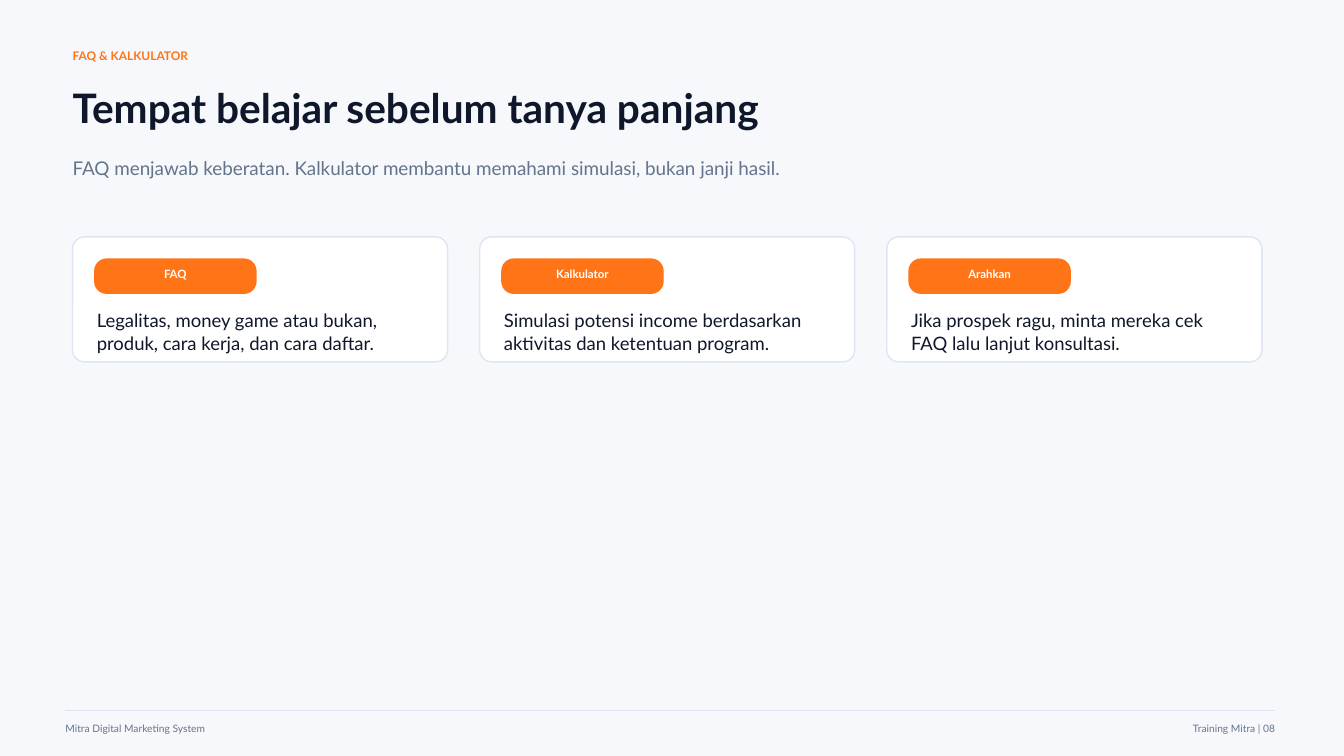
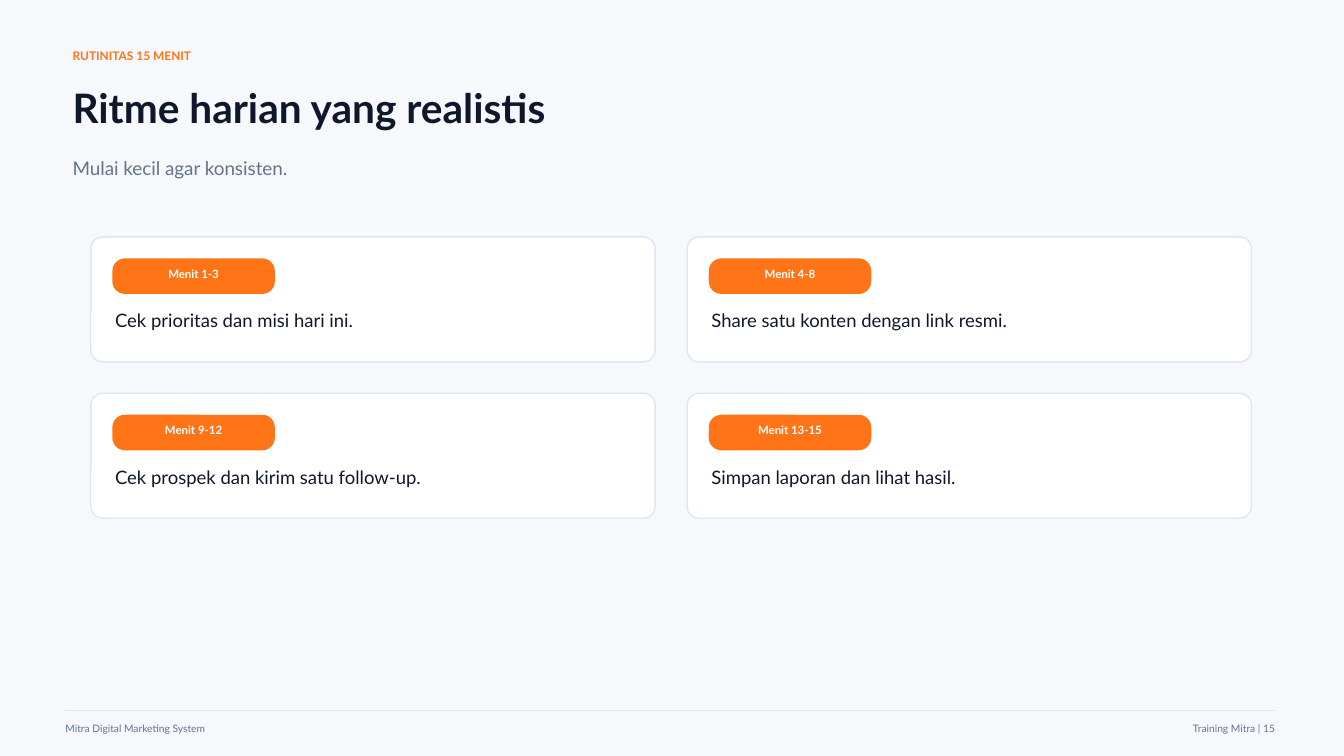
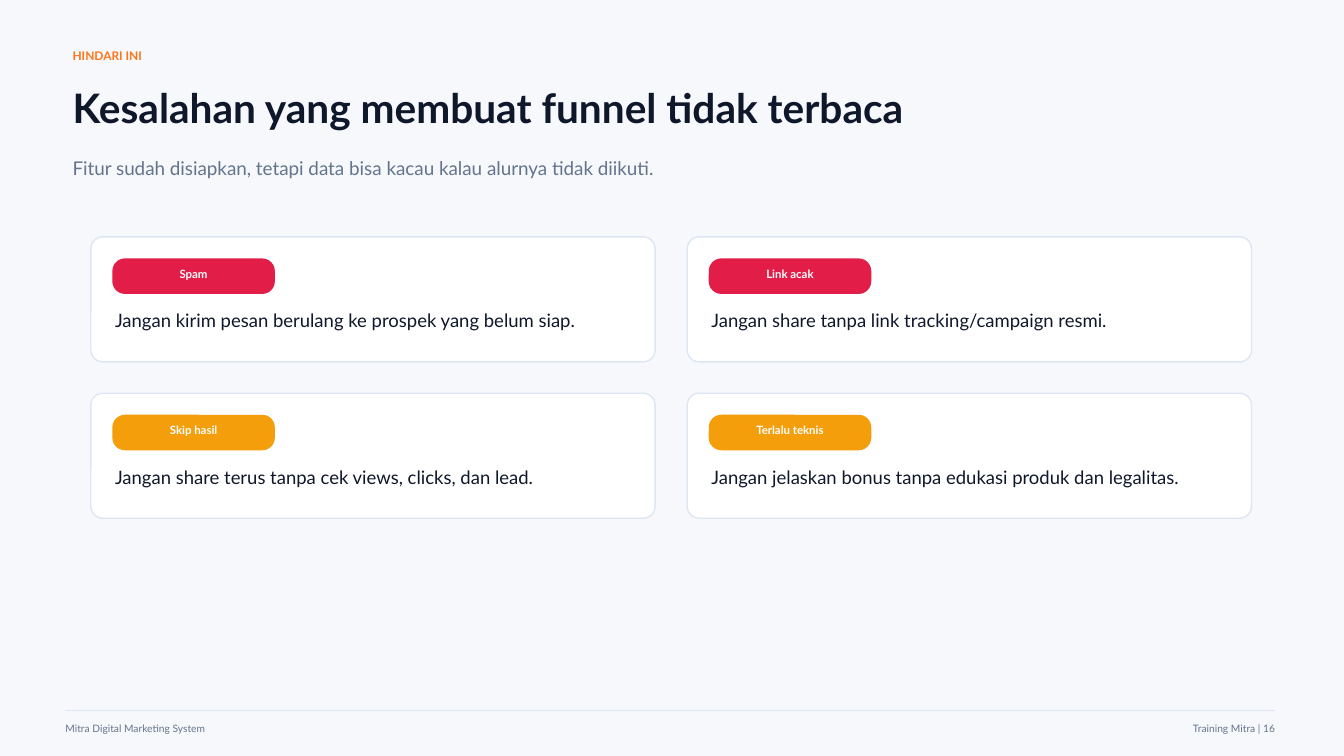
from dataclasses import dataclass

from lxml.etree import SubElement
from pptx import Presentation
from pptx.dml.color import RGBColor
from pptx.enum.shapes import MSO_CONNECTOR, MSO_SHAPE
from pptx.enum.text import MSO_ANCHOR, PP_ALIGN
from pptx.oxml.ns import qn
from pptx.shapes.autoshape import Shape
from pptx.slide import Slide
from pptx.text.text import TextFrame
from pptx.util import Cm, Pt

FONT = "Lato"
PAPER = RGBColor(0xF6, 0xF8, 0xFC)
WHITE = RGBColor(0xFF, 0xFF, 0xFF)
INK = RGBColor(0x0F, 0x17, 0x2A)
GREY = RGBColor(0x64, 0x74, 0x8B)
RULE = RGBColor(0xDD, 0xE6, 0xF2)
ORANGE = RGBColor(0xFF, 0x74, 0x17)
RED = RGBColor(0xE1, 0x1D, 0x48)
AMBER = RGBColor(0xF5, 0x9E, 0x0B)

# Lengths in centimetres
LEFT = 1.83
EDGE, END = 1.65, 32.13
TOP = 5.97
CARD_H = 3.15
GAP_X, GAP_Y = 0.81, 0.79
PAD = 0.56
PILL_W, PILL_H = 4.06, 0.86
BODY_X, BODY_Y, BODY_H = 0.61, 1.83, 0.74
RADIUS = 0.3


@dataclass(frozen=True)
class Box:
    x: float
    y: float
    w: float
    h: float


@dataclass(frozen=True)
class Card:
    label: str
    body: str
    color: RGBColor = ORANGE


@dataclass(frozen=True)
class Grid:
    left: float
    width: float
    cols: int

    def cell(self, index: int) -> Box:
        row, col = divmod(index, self.cols)
        return Box(self.left + col * (self.width + GAP_X),
                   TOP + row * (CARD_H + GAP_Y), self.width, CARD_H)


@dataclass(frozen=True)
class Page:
    number: int
    topic: str
    title: str
    lead: str
    grid: Grid
    cards: tuple[Card, ...]


THREE = Grid(LEFT, 9.45, 3)
TWO = Grid(2.29, 14.22, 2)

PAGES = (
    Page(8, "FAQ & KALKULATOR", "Tempat belajar sebelum tanya panjang",
         "FAQ menjawab keberatan. Kalkulator membantu memahami simulasi, "
         "bukan janji hasil.", THREE, (
             Card("FAQ", "Legalitas, money game atau bukan, produk, "
                  "cara kerja, dan cara daftar."),
             Card("Kalkulator", "Simulasi potensi income berdasarkan "
                  "aktivitas dan ketentuan program."),
             Card("Arahkan", "Jika prospek ragu, minta mereka cek FAQ "
                  "lalu lanjut konsultasi."),
         )),
    Page(15, "RUTINITAS 15 MENIT", "Ritme harian yang realistis",
         "Mulai kecil agar konsisten.", TWO, (
             Card("Menit 1-3", "Cek prioritas dan misi hari ini."),
             Card("Menit 4-8", "Share satu konten dengan link resmi."),
             Card("Menit 9-12", "Cek prospek dan kirim satu follow-up."),
             Card("Menit 13-15", "Simpan laporan dan lihat hasil."),
         )),
    Page(16, "HINDARI INI", "Kesalahan yang membuat funnel tidak terbaca",
         "Fitur sudah disiapkan, tetapi data bisa kacau kalau alurnya "
         "tidak diikuti.", TWO, (
             Card("Spam", "Jangan kirim pesan berulang ke prospek "
                  "yang belum siap.", RED),
             Card("Link acak", "Jangan share tanpa link "
                  "tracking/campaign resmi.", RED),
             Card("Skip hasil", "Jangan share terus tanpa cek views, "
                  "clicks, dan lead.", AMBER),
             Card("Terlalu teknis", "Jangan jelaskan bonus tanpa edukasi "
                  "produk dan legalitas.", AMBER),
         )),
)


def write(frame: TextFrame, text: str, *, size: float, color: RGBColor,
          bold: bool = False, align: PP_ALIGN = PP_ALIGN.LEFT,
          inset: float = 0) -> None:
    """Fill a frame from its top edge, with inset as the top margin in cm."""
    frame.word_wrap = True
    frame.vertical_anchor = MSO_ANCHOR.TOP
    frame.margin_left = frame.margin_right = frame.margin_bottom = 0
    frame.margin_top = Cm(inset)
    para = frame.paragraphs[0]
    para.alignment = align
    run = para.add_run()
    run.text = text
    font = run.font
    font.name, font.size, font.bold = FONT, Pt(size), bold
    font.color.rgb = color


def add_text(slide: Slide, box: Box) -> TextFrame:
    shape = slide.shapes.add_textbox(Cm(box.x), Cm(box.y), Cm(box.w), Cm(box.h))
    return shape.text_frame


def add_round(slide: Slide, box: Box, fill: RGBColor, line: RGBColor) -> Shape:
    shape = slide.shapes.add_shape(MSO_SHAPE.ROUNDED_RECTANGLE, Cm(box.x),
                                   Cm(box.y), Cm(box.w), Cm(box.h))
    shape.adjustments[0] = RADIUS / min(box.w, box.h)
    shape.shadow.inherit = False
    shape.fill.solid()
    shape.fill.fore_color.rgb = fill
    shape.line.color.rgb = line
    shape.line.width = Pt(1)
    return shape


def add_head(slide: Slide, page: Page) -> None:
    write(add_text(slide, Box(LEFT, 1.22, 14.22, 0.56)), page.topic,
          size=8.5, color=ORANGE, bold=True)
    write(add_text(slide, Box(LEFT, 2.08, 22.35, 1.57)), page.title,
          size=29, color=INK, bold=True)
    write(add_text(slide, Box(LEFT, 3.94, 21.34, 1.14)), page.lead,
          size=13.5, color=GREY)


def add_foot(slide: Slide, number: int) -> None:
    rule = slide.shapes.add_connector(MSO_CONNECTOR.STRAIGHT, Cm(EDGE),
                                      Cm(17.91), Cm(END), Cm(17.91))
    rule.line.color.rgb = RULE
    rule.line.width = Pt(1)
    SubElement(rule._element.spPr, qn("a:effectLst"))
    write(add_text(slide, Box(EDGE, 18.21, 12.7, 0.38)),
          "Mitra Digital Marketing System", size=7.3, color=GREY)
    write(add_text(slide, Box(END - 4.19, 18.21, 4.19, 0.38)),
          f"Training Mitra | {number:02}", size=7.3, color=GREY,
          align=PP_ALIGN.RIGHT)


def add_card(slide: Slide, card: Card, box: Box) -> None:
    add_round(slide, box, WHITE, RULE)
    pill = add_round(slide, Box(box.x + PAD, box.y + PAD, PILL_W, PILL_H),
                     card.color, card.color)
    write(pill.text_frame, card.label, size=8.2, color=WHITE, bold=True,
          align=PP_ALIGN.CENTER, inset=0.11)
    body = Box(box.x + BODY_X, box.y + BODY_Y, box.w - 2 * BODY_X, BODY_H)
    write(add_text(slide, body), card.body, size=13.2, color=INK)


def main() -> None:
    deck = Presentation()
    deck.slide_width, deck.slide_height = Cm(33.87), Cm(19.05)
    blank = deck.slide_layouts[6]
    for page in PAGES:
        slide = deck.slides.add_slide(blank)
        slide.background.fill.solid()
        slide.background.fill.fore_color.rgb = PAPER
        add_head(slide, page)
        add_foot(slide, page.number)
        for index, card in enumerate(page.cards):
            add_card(slide, card, page.grid.cell(index))
    deck.save("out.pptx")


if __name__ == "__main__":
    main()
